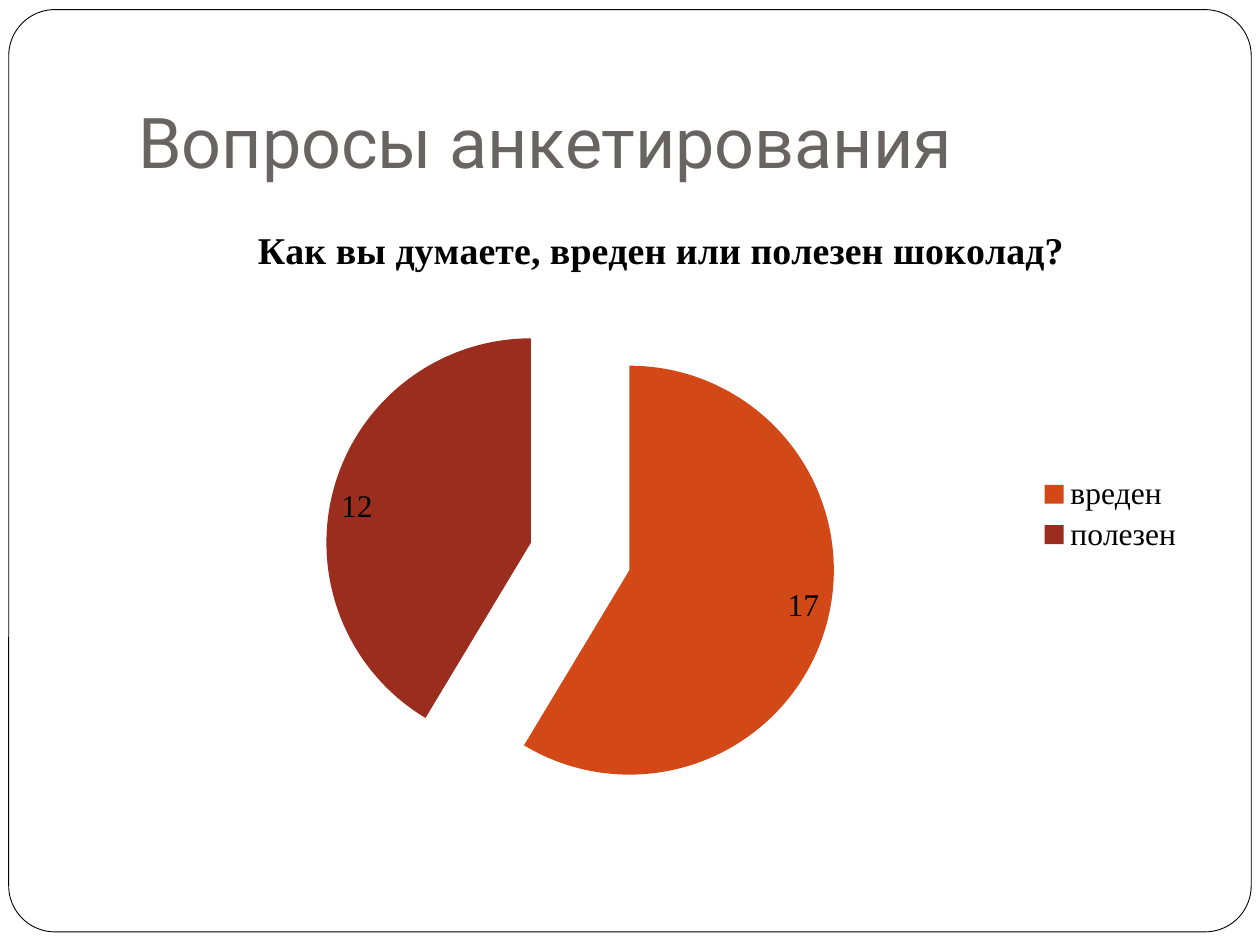
from pptx import Presentation
from pptx.chart.data import CategoryChartData
from pptx.dml.color import RGBColor
from pptx.enum.chart import XL_CHART_TYPE as ChartType
from pptx.enum.chart import XL_LABEL_POSITION as LabelPos
from pptx.enum.chart import XL_LEGEND_POSITION as LegendPos
from pptx.enum.shapes import MSO_SHAPE as Shape
from pptx.enum.text import MSO_ANCHOR as Anchor
from pptx.oxml import parse_xml
from pptx.oxml.ns import nsdecls, qn
from pptx.util import Pt

QUESTION = "Как вы думаете, вреден или полезен шоколад?"
ANSWERS = [("вреден", 17, "D34817"), ("полезен", 12, "9B2D1F")]


def rgb(value):
    return RGBColor.from_string(value)


def set_font(font, name, size, color, bold=False):
    font.name = name
    font.size = Pt(size)
    font.bold = bold
    font.color.rgb = rgb(color)


def add_frame(s, x, y, w, h):
    sp = s.shapes.add_shape(Shape.ROUNDED_RECTANGLE, Pt(x), Pt(y), Pt(w), Pt(h))
    sp.adjustments[0] = 0.05
    sp.shadow.inherit = False
    sp.fill.solid()
    sp.fill.fore_color.rgb = rgb("FFFFFF")
    sp.line.color.rgb = rgb("000000")
    sp.line.width = Pt(0.5)


def add_title(s, text, x, y, w, h):
    tf = s.shapes.add_textbox(Pt(x), Pt(y), Pt(w), Pt(h)).text_frame
    tf.word_wrap = True
    tf.vertical_anchor = Anchor.BOTTOM
    tf.margin_bottom = Pt(7.2)
    p = tf.paragraphs[0]
    p.text = text
    set_font(p.font, "Roboto", 40, "696464")


def explode(series, percent):
    node = parse_xml(f'<c:explosion {nsdecls("c")} val="{percent}"/>')
    series._element.find(qn("c:dPt")).addprevious(node)


def add_pie(s, question, answers, x, y, w, h):
    data = CategoryChartData()
    data.categories = [name for name, _, _ in answers]
    data.add_series(question, [count for _, count, _ in answers])
    chart = s.shapes.add_chart(
        ChartType.PIE, Pt(x), Pt(y), Pt(w), Pt(h), data
    ).chart
    set_font(chart.font, "Times New Roman", 18, "000000")

    chart.has_title = True
    p = chart.chart_title.text_frame.paragraphs[0]
    p.text = question
    set_font(p.font, "Times New Roman", 21.6, "000000", bold=True)

    chart.has_legend = True
    chart.legend.position = LegendPos.RIGHT
    chart.legend.include_in_layout = False

    plot = chart.plots[0]
    plot.vary_by_categories = True
    plot.has_data_labels = True
    plot.data_labels.show_value = True
    plot.data_labels.show_percentage = False
    plot.data_labels.position = LabelPos.INSIDE_END

    series = plot.series[0]
    for i, (_, _, color) in enumerate(answers):
        fill = series.points[i].format.fill
        fill.solid()
        fill.fore_color.rgb = rgb(color)
    explode(series, 25)


def main():
    prs = Presentation()
    prs.slide_width, prs.slide_height = Pt(720), Pt(540)
    s = prs.slides.add_slide(prs.slide_layouts[6])
    add_frame(s, 5, 5.5, 710, 527)
    add_title(s, "Вопросы анкетирования", 72, 21.6, 612, 90)
    add_pie(s, QUESTION, ANSWERS, 72, 114, 612, 360)
    prs.save("out.pptx")


if __name__ == "__main__":
    main()
